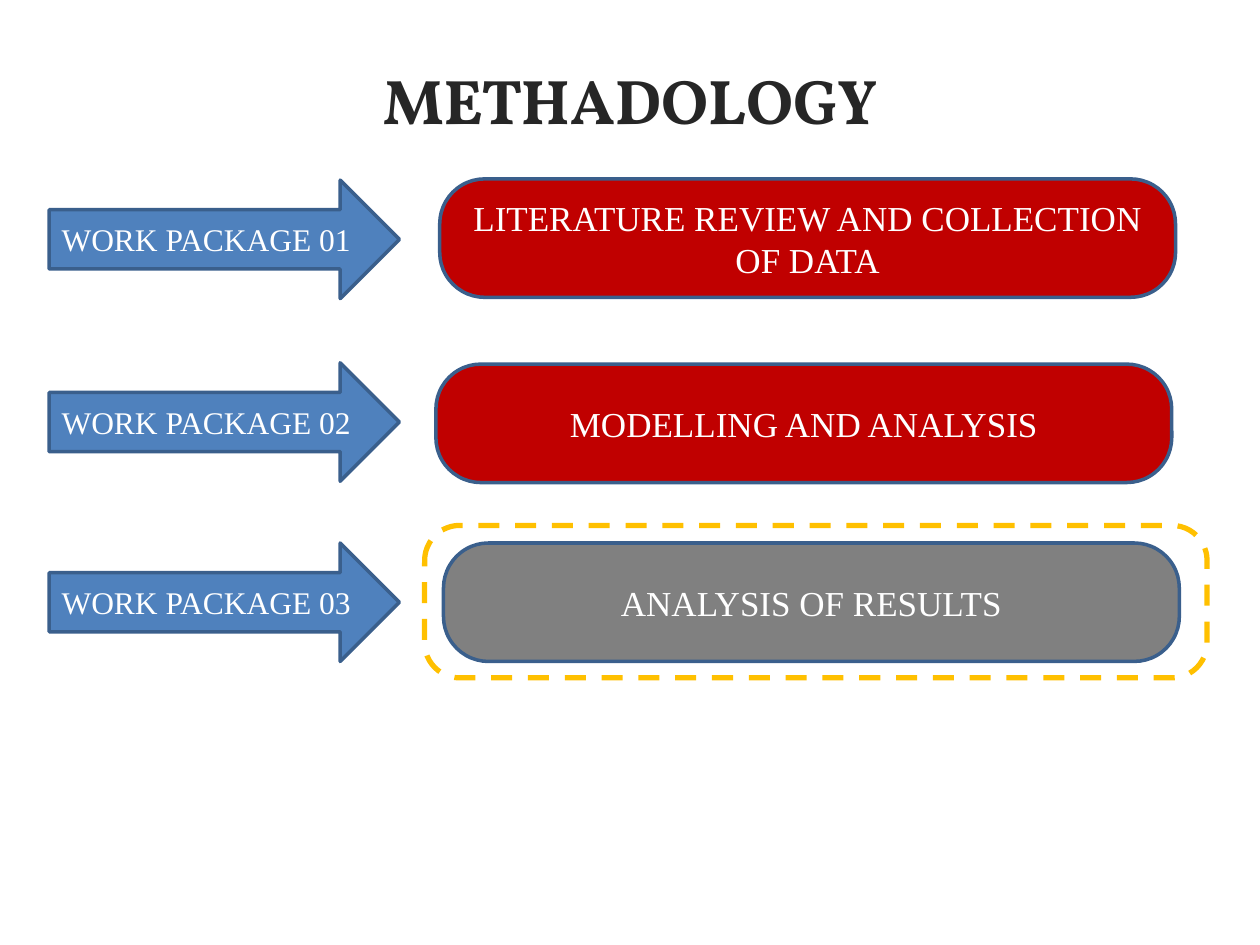
from dataclasses import dataclass

from pptx import Presentation
from pptx.dml.color import RGBColor
from pptx.enum.dml import MSO_LINE
from pptx.enum.shapes import MSO_SHAPE
from pptx.enum.text import MSO_ANCHOR, PP_ALIGN
from pptx.shapes.autoshape import Shape
from pptx.slide import Slide
from pptx.util import Inches, Pt

ARROW = MSO_SHAPE.RIGHT_ARROW
ROUNDED = MSO_SHAPE.ROUNDED_RECTANGLE
DASH = MSO_LINE.DASH
MIDDLE = MSO_ANCHOR.MIDDLE
LEFT, CENTER = PP_ALIGN.LEFT, PP_ALIGN.CENTER

WHITE = RGBColor(0xFF, 0xFF, 0xFF)
INK = RGBColor(0x26, 0x26, 0x26)
BLUE = RGBColor(0x4F, 0x81, 0xBD)
OUTLINE = RGBColor(0x3A, 0x5F, 0x8C)
RED = RGBColor(0xC0, 0x00, 0x00)
GREY = RGBColor(0x80, 0x80, 0x80)
AMBER = RGBColor(0xFF, 0xC0, 0x00)

BODY_FONT = "Times New Roman"
TITLE_FONT = "Vollkorn"

SLIDE_WIDTH, SLIDE_HEIGHT = 10, 7.5
ARROW_LEFT, ARROW_WIDTH = 0.39, 2.78
TASK_WIDTH, ROW_HEIGHT = 5.84, 0.94


@dataclass(frozen=True)
class Area:
    left: float
    top: float
    width: float
    height: float

    def lengths(self) -> tuple[int, int, int, int]:
        return (Inches(self.left), Inches(self.top),
                Inches(self.width), Inches(self.height))


@dataclass(frozen=True)
class WorkPackage:
    task: str
    arrow_top: float
    task_left: float
    task_top: float
    fill: RGBColor


PACKAGES = [
    WorkPackage("LITERATURE REVIEW AND COLLECTION OF DATA", 1.43, 3.49, 1.42, RED),
    WorkPackage("MODELLING AND ANALYSIS", 2.88, 3.46, 2.89, RED),
    WorkPackage("ANALYSIS OF RESULTS", 4.31, 3.52, 4.31, GREY),
]


def write_text(box: Shape, text: str, size: int, align: PP_ALIGN,
               font_name: str = BODY_FONT, color: RGBColor = WHITE,
               bold: bool = False) -> None:
    frame = box.text_frame
    frame.word_wrap = True
    frame.vertical_anchor = MIDDLE
    frame.text = text
    para = frame.paragraphs[0]
    para.alignment = align
    font = para.runs[0].font
    font.name = font_name
    font.size = Pt(size)
    font.bold = bold
    font.color.rgb = color


def add_outlined(page: Slide, kind: MSO_SHAPE, area: Area, fill: RGBColor | None,
                 line: RGBColor = OUTLINE, line_width: float = 2) -> Shape:
    shape = page.shapes.add_shape(kind, *area.lengths())
    shape.shadow.inherit = False
    if fill is None:
        shape.fill.background()
    else:
        shape.fill.solid()
        shape.fill.fore_color.rgb = fill
    shape.line.color.rgb = line
    shape.line.width = Pt(line_width)
    return shape


def add_title(page: Slide, text: str) -> None:
    margin = 0.05 * SLIDE_WIDTH
    area = Area(margin, 0.16, SLIDE_WIDTH - 2 * margin, SLIDE_HEIGHT / 6)
    box = page.shapes.add_textbox(*area.lengths())
    write_text(box, text, 36, CENTER, TITLE_FONT, INK, True)


def add_package(page: Slide, number: int, package: WorkPackage) -> None:
    arrow_area = Area(ARROW_LEFT, package.arrow_top, ARROW_WIDTH, ROW_HEIGHT)
    arrow = add_outlined(page, ARROW, arrow_area, BLUE)
    write_text(arrow, f"WORK PACKAGE {number:02d}", 18, LEFT)
    task_area = Area(package.task_left, package.task_top, TASK_WIDTH, ROW_HEIGHT)
    task = add_outlined(page, ROUNDED, task_area, package.fill)
    task.adjustments[0] = 0.38
    write_text(task, package.task, 20, CENTER)


def add_highlight(page: Slide) -> None:
    frame = add_outlined(page, ROUNDED, Area(3.37, 4.17, 6.21, 1.21), None, AMBER, 3)
    frame.adjustments[0] = 0.23
    frame.line.dash_style = DASH


def main() -> None:
    deck = Presentation()
    deck.slide_width = Inches(SLIDE_WIDTH)
    deck.slide_height = Inches(SLIDE_HEIGHT)
    page = deck.slides.add_slide(deck.slide_layouts[6])
    add_title(page, "METHADOLOGY")
    for number, package in enumerate(PACKAGES, start=1):
        add_package(page, number, package)
    add_highlight(page)
    deck.save("out.pptx")


if __name__ == "__main__":
    main()
